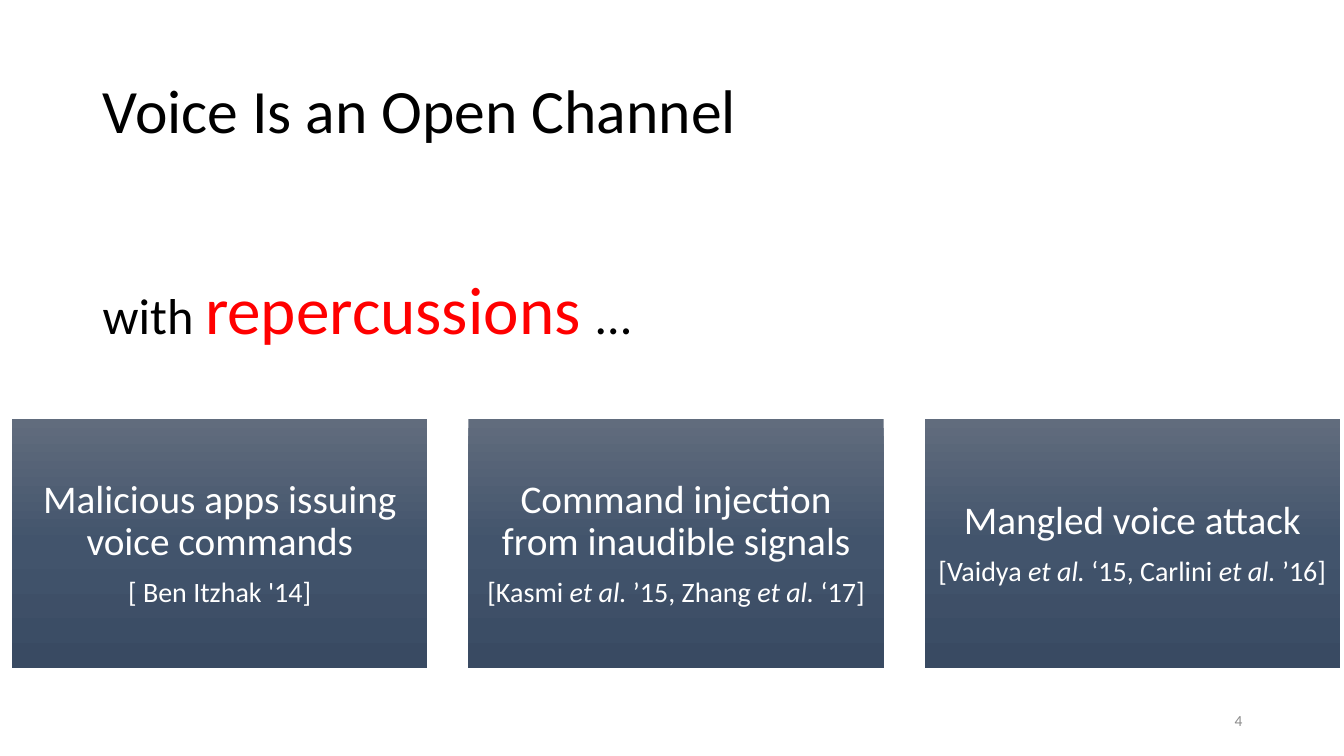
import copy
from dataclasses import dataclass

import pptx
import pptx.dml.color
import pptx.enum.shapes
import pptx.enum.text
import pptx.oxml.ns
import pptx.util

Inches = pptx.util.Inches
Pt = pptx.util.Pt
Anchor = pptx.enum.text.MSO_ANCHOR
Align = pptx.enum.text.PP_ALIGN


@dataclass(frozen=True)
class Theme:
    """Colours, font and type sizes of the slide."""
    font: str = "Calibri"
    text: str = "000000"
    accent: str = "FF0000"
    muted: str = "8C8C8C"
    card_text: str = "FFFFFF"
    card_gradient: tuple = ("616C7D", "42546C", "394A62")
    title_size: int = 44
    lead_size: int = 36
    accent_size: int = 48
    card_size: int = 28
    citation_size: int = 20
    number_size: int = 11


THEME = Theme()
ATTACKS = [
    ("Malicious apps issuing voice commands", ["[ Ben Itzhak '14]"]),
    ("Command injection from inaudible signals",
     ["[Kasmi ", "et al. ", "’15, Zhang ", "et al. ", "‘17]"]),
    ("Mangled voice attack",
     ["[Vaidya ", "et al. ", "‘15, Carlini ", "et al. ", "’16]"]),
]


def style_run(run, size, color, italic=False):
    """Set the font, size, colour and slant of a run."""
    run.font.name = THEME.font
    run.font.size = Pt(size)
    run.font.italic = italic
    run.font.color.rgb = pptx.dml.color.RGBColor.from_string(color)


def add_styled_run(paragraph, text, size, color, italic=False):
    """Append a formatted run to a paragraph."""
    run = paragraph.add_run()
    run.text = text
    style_run(run, size, color, italic)


def place_title(slide, left, top, width, height):
    """Move and format the title placeholder."""
    title = slide.shapes.title
    title.left, title.top = Inches(left), Inches(top)
    title.width, title.height = Inches(width), Inches(height)
    title.text_frame.text = "Voice Is an Open Channel"
    title.text_frame.vertical_anchor = Anchor.MIDDLE
    paragraph = title.text_frame.paragraphs[0]
    paragraph.alignment = Align.LEFT
    paragraph.line_spacing = 0.9
    style_run(paragraph.runs[0], THEME.title_size, THEME.text)


def add_text_box(slide, left, top, width, height):
    """Add a wrapping text box and return its text frame."""
    box = slide.shapes.add_textbox(
        Inches(left), Inches(top), Inches(width), Inches(height))
    box.text_frame.word_wrap = True
    return box.text_frame


def add_lead(slide, left, top, width, height):
    """Add the line that leads into the attack cards."""
    paragraph = add_text_box(slide, left, top, width, height).paragraphs[0]
    paragraph.line_spacing = 0.9
    add_styled_run(paragraph, "with ", THEME.lead_size, THEME.text)
    add_styled_run(paragraph, "repercussions ", THEME.accent_size, THEME.accent)
    add_styled_run(paragraph, "…", THEME.lead_size, THEME.text)


def fill_card(card):
    """Give a card its three-stop vertical gradient."""
    card.fill.gradient()
    card.fill.gradient_angle = 270
    stop_list = card._element.spPr.find(".//" + pptx.oxml.ns.qn("a:gsLst"))
    stop_list.insert(1, copy.deepcopy(stop_list[0]))
    stops = card.fill.gradient_stops
    for stop, position, color in zip(stops, (0, 0.5, 1), THEME.card_gradient):
        stop.position = position
        stop.color.rgb = pptx.dml.color.RGBColor.from_string(color)


def add_card(slide, left, top, width, height, attack, citation):
    """Add a card with an attack and its citation."""
    card = slide.shapes.add_shape(
        pptx.enum.shapes.MSO_SHAPE.RECTANGLE,
        Inches(left), Inches(top), Inches(width), Inches(height))
    card.shadow.inherit = False
    card.line.fill.background()
    fill_card(card)
    frame = card.text_frame
    frame.word_wrap = True
    frame.vertical_anchor = Anchor.MIDDLE
    frame.margin_left = frame.margin_right = Inches(0.12)
    frame.margin_top = frame.margin_bottom = Inches(0.12)
    frame.text = attack
    heading = frame.paragraphs[0]
    style_run(heading.runs[0], THEME.card_size, THEME.card_text)
    heading.space_after = Pt(10)
    source = frame.add_paragraph()
    for index, part in enumerate(citation):
        add_styled_run(source, part, THEME.citation_size, THEME.card_text,
                       italic=index % 2 == 1)
    for paragraph in frame.paragraphs:
        paragraph.alignment = Align.CENTER
        paragraph.line_spacing = 0.9


def add_cards(slide, left, top, width, height):
    """Spread the attack cards evenly across a row."""
    card_width = 4.12
    step = (width - card_width) / (len(ATTACKS) - 1)
    for index, (attack, citation) in enumerate(ATTACKS):
        add_card(slide, left + index * step, top, card_width, height,
                 attack, citation)


def add_slide_number(slide, left, top, width, height):
    """Add the slide number at the lower right."""
    frame = add_text_box(slide, left, top, width, height)
    frame.vertical_anchor = Anchor.MIDDLE
    frame.text = "4"
    paragraph = frame.paragraphs[0]
    paragraph.alignment = Align.RIGHT
    style_run(paragraph.runs[0], THEME.number_size, THEME.muted)


def main():
    """Build the slide and save it."""
    presentation = pptx.Presentation()
    presentation.slide_width = Inches(13.33)
    presentation.slide_height = Inches(7.5)
    slide = presentation.slides.add_slide(presentation.slide_layouts[5])
    place_title(slide, 0.92, 0.4, 11.5, 1.45)
    add_lead(slide, 0.92, 2.69, 6.13, 0.9)
    add_cards(slide, 0.12, 4.16, 13.17, 2.47)
    add_slide_number(slide, 9.42, 6.95, 3, 0.4)
    presentation.save("out.pptx")


if __name__ == "__main__":
    main()
